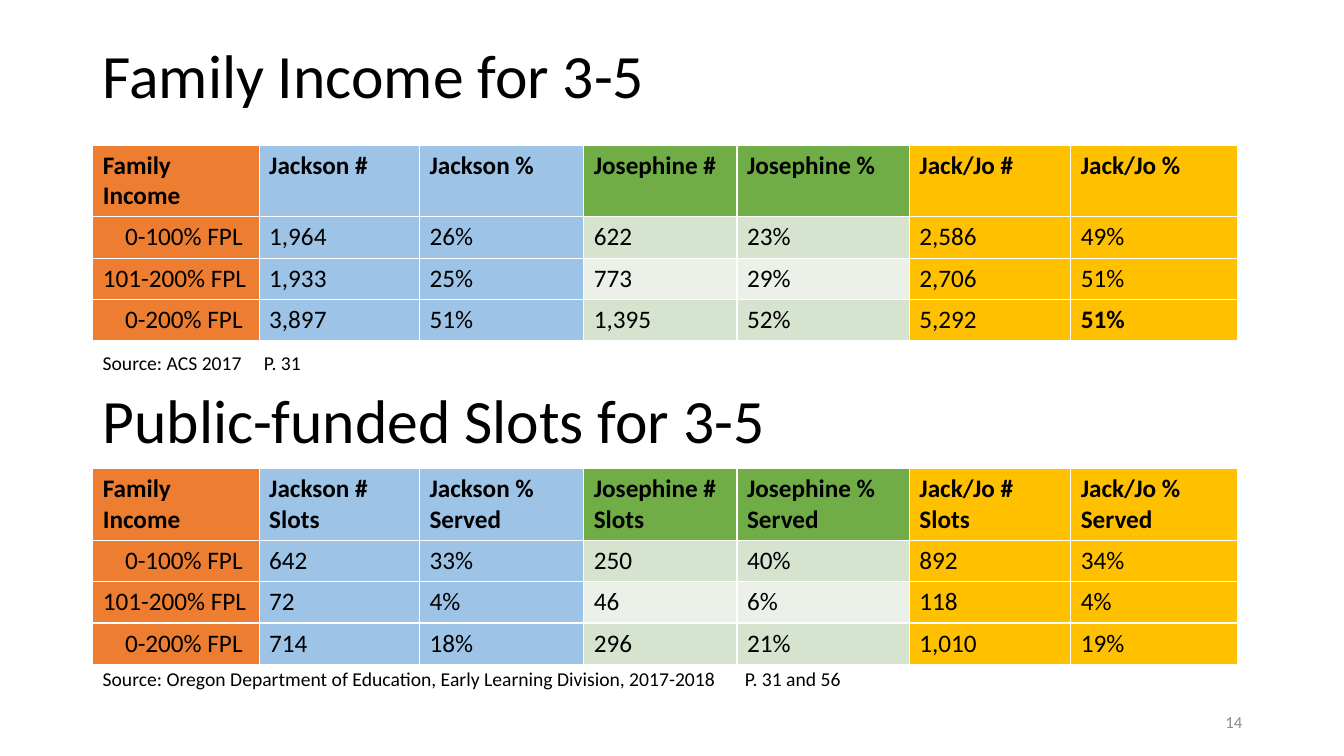
"""Build the slide on family income and public-funded slots for ages 3-5."""
from dataclasses import dataclass
from typing import Optional

from lxml import etree
from pptx import Presentation
from pptx import util as u
from pptx.dml.color import RGBColor
from pptx.enum import text
from pptx.oxml import ns
from pptx.slide import Slide


@dataclass(frozen=True)
class Theme:
    """Font, colours and type sizes of the slide."""
    font: str = "Calibri"
    ink: str = "000000"
    muted: str = "8C8C8C"
    income: str = "ED7D31"
    jackson: str = "9DC3E6"
    josephine: str = "70AD47"
    josephine_bands: tuple[str, str] = ("D5E3CF", "EBF1E9")
    combined: str = "FFC000"
    heading: float = 44
    cell: float = 18
    source: float = 14
    number: float = 12


@dataclass(frozen=True)
class Label:
    """A line of text in its own box."""
    words: str
    left: float
    top: float
    width: float
    height: float
    size: float
    color: str
    spacing: Optional[float] = None
    align: Optional[text.PP_ALIGN] = None
    tab: Optional[float] = None


@dataclass(frozen=True)
class CountyTable:
    """A table of county figures by income band."""
    top: float
    headers: tuple[str, ...]
    figures: tuple[tuple[str, ...], ...]
    bold_cells: tuple[tuple[int, int], ...] = ()


THEME = Theme()
LEFT = 0.92
COLUMN_WIDTHS = (1.65, 1.59, 1.63, 1.52, 1.71, 1.6, 1.66)
ROW_HEIGHTS = (0.69, 0.41, 0.41, 0.41)
BAND_INDENT = 0.22
INCOME_BANDS = ("0-100% FPL", "101-200% FPL", "0-200% FPL")
COLUMN_FILLS = (THEME.income, *(fill for fill in (
    THEME.jackson, THEME.josephine, THEME.combined) for _ in range(2)))

TABLES = (
    CountyTable(
        1.44,
        ("Family Income", "Jackson #", "Jackson %", "Josephine #",
         "Josephine %", "Jack/Jo #", "Jack/Jo %"),
        (("1,964", "26%", "622", "23%", "2,586", "49%"),
         ("1,933", "25%", "773", "29%", "2,706", "51%"),
         ("3,897", "51%", "1,395", "52%", "5,292", "51%")),
        bold_cells=((3, 6),)),
    CountyTable(
        4.65,
        ("Family Income", "Jackson # Slots", "Jackson % Served",
         "Josephine #\nSlots", "Josephine %\nServed",
         "Jack/Jo # Slots", "Jack/Jo % Served"),
        (("642", "33%", "250", "40%", "892", "34%"),
         ("72", "4%", "46", "6%", "118", "4%"),
         ("714", "18%", "296", "21%", "1,010", "19%"))),
)

LABELS = (
    Label("Family Income for 3-5", LEFT, 0.4, 11.5, 0.9,
          THEME.heading, THEME.ink, spacing=0.9),
    Label("Source: ACS 2017\tP. 31", LEFT, 3.43, 11.36, 0.34,
          THEME.source, THEME.ink, tab=1.6),
    Label("Public-funded Slots for 3-5", LEFT, 3.74, 8.98, 0.84,
          THEME.heading, THEME.ink),
    Label("Source: Oregon Department of Education, Early Learning Division, "
          "2017-2018\tP. 31 and 56", LEFT, 6.57, 8.1, 0.34,
          THEME.source, THEME.ink, tab=6.37),
    Label("14", 9.42, 7.01, 3, 0.3, THEME.number, THEME.muted,
          align=text.PP_ALIGN.RIGHT),
)


def add_words(paragraph, words: str, size: float, color: str,
              bold: bool = False) -> None:
    """Add one styled run to a paragraph."""
    run = paragraph.add_run()
    run.text = words
    run.font.name = THEME.font
    run.font.size = u.Pt(size)
    run.font.bold = bold
    run.font.color.rgb = RGBColor.from_string(color)


def add_tab_stop(paragraph, position: float) -> None:
    """Set a left tab stop, measured from the start of the text."""
    stops = etree.SubElement(paragraph._p.get_or_add_pPr(), ns.qn("a:tabLst"))
    etree.SubElement(stops, ns.qn("a:tab"),
                     pos=str(u.Inches(position)), algn="l")


def draw_label(slide: Slide, label: Label) -> None:
    """Draw a label as a wrapped text box."""
    box = slide.shapes.add_textbox(
        *map(u.Inches, (label.left, label.top, label.width, label.height)))
    box.text_frame.word_wrap = True
    line = box.text_frame.paragraphs[0]
    if label.tab is not None:
        add_tab_stop(line, label.tab)
    line.line_spacing = label.spacing
    line.alignment = label.align
    add_words(line, label.words, label.size, label.color)


def fill_color(row: int, column: int) -> str:
    """Pick the cell colour; only Josephine's body rows are banded."""
    color = COLUMN_FILLS[column]
    if row and color == THEME.josephine:
        return THEME.josephine_bands[(row - 1) % 2]
    return color


def draw_table(slide: Slide, county: CountyTable) -> None:
    """Draw a county table with its header and income bands."""
    grid = slide.shapes.add_table(
        len(ROW_HEIGHTS), len(COLUMN_WIDTHS), u.Inches(LEFT),
        u.Inches(county.top), u.Inches(sum(COLUMN_WIDTHS)),
        u.Inches(sum(ROW_HEIGHTS))).table
    for column, width in zip(grid.columns, COLUMN_WIDTHS):
        column.width = u.Inches(width)
    for row, height in zip(grid.rows, ROW_HEIGHTS):
        row.height = u.Inches(height)
    body = tuple((band, *figures)
                 for band, figures in zip(INCOME_BANDS, county.figures))
    for r, entries in enumerate((county.headers, *body)):
        for c, entry in enumerate(entries):
            cell = grid.cell(r, c)
            cell.fill.solid()
            cell.fill.fore_color.rgb = RGBColor.from_string(fill_color(r, c))
            if c == 0 and entry.startswith("0-"):
                cell.margin_left = u.Inches(0.1 + BAND_INDENT)
            bold = r == 0 or (r, c) in county.bold_cells
            for i, words in enumerate(entry.split("\n")):
                frame = cell.text_frame
                line = frame.add_paragraph() if i else frame.paragraphs[0]
                add_words(line, words, THEME.cell, THEME.ink, bold)


def main() -> None:
    """Build and save the slide."""
    deck = Presentation()
    deck.slide_width, deck.slide_height = u.Inches(13.33), u.Inches(7.5)
    slide = deck.slides.add_slide(deck.slide_layouts[6])
    for county in TABLES:
        draw_table(slide, county)
    for label in LABELS:
        draw_label(slide, label)
    deck.save("out.pptx")


if __name__ == "__main__":
    main()
